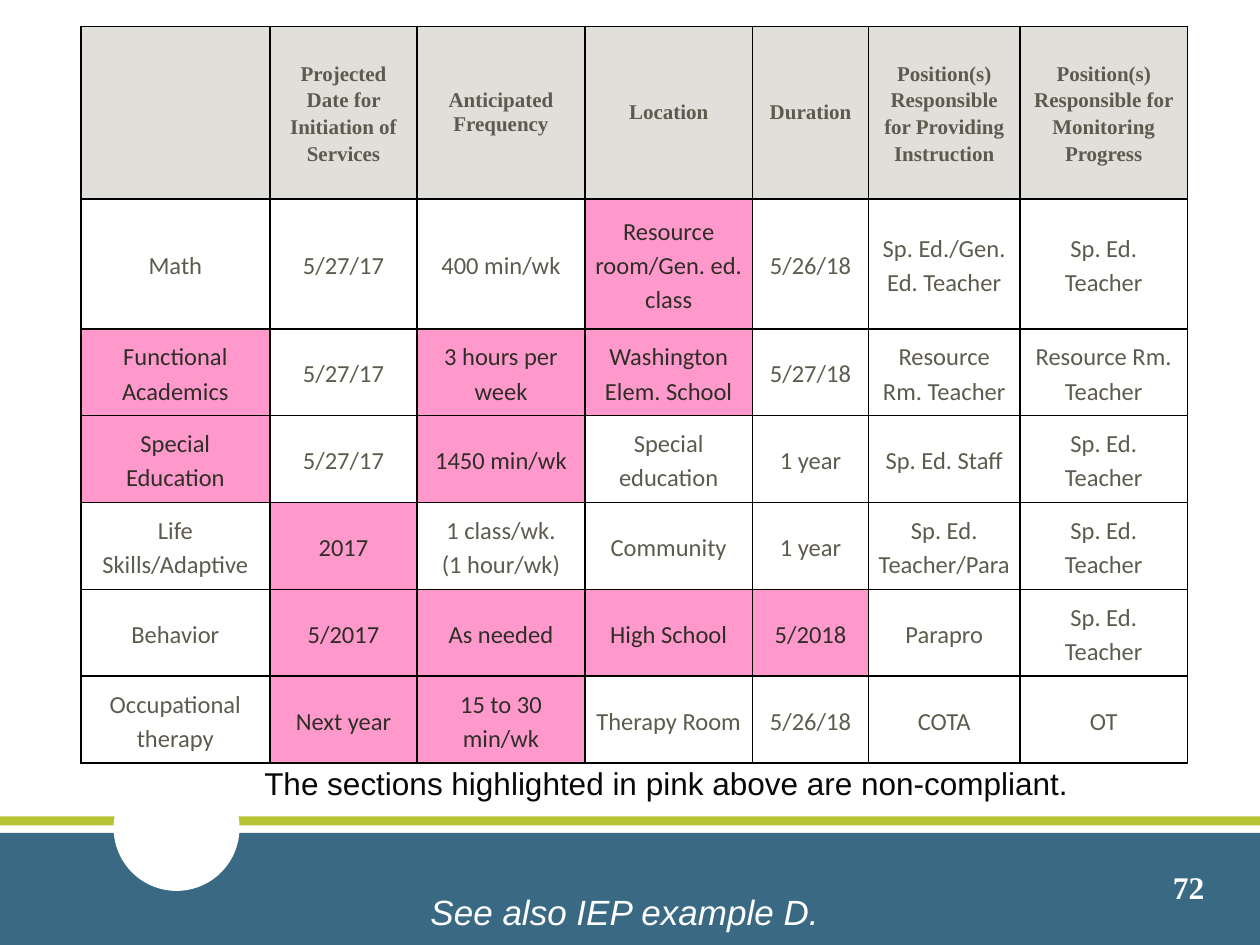
"""Build the slide with the table of planned services."""
import pptx
import pptx.dml.color
import pptx.enum.shapes
import pptx.enum.text
import pptx.oxml
import pptx.oxml.ns
import pptx.util

Cm, Pt = pptx.util.Cm, pptx.util.Pt
RGBColor = pptx.dml.color.RGBColor
ALIGN = pptx.enum.text.PP_ALIGN
ANCHOR = pptx.enum.text.MSO_ANCHOR
SHAPE = pptx.enum.shapes.MSO_SHAPE

WHITE = RGBColor(0xFF, 0xFF, 0xFF)
BLACK = RGBColor(0x00, 0x00, 0x00)
INK = RGBColor(0x07, 0x07, 0x05)
LIME = RGBColor(0xB7, 0xC3, 0x33)
BLUE = RGBColor(0x3A, 0x69, 0x83)
STONE = RGBColor(0xE0, 0xDF, 0xDA)
PINK = RGBColor(0xFF, 0x99, 0xCC)
GREY = RGBColor(0x5D, 0x5B, 0x4E)
DARK = RGBColor(0x2E, 0x2E, 0x27)

HEAD = ["", "Projected Date for Initiation of Services", "Anticipated Frequency",
        "Location", "Duration", "Position(s) Responsible for Providing Instruction",
        "Position(s) Responsible for Monitoring Progress"]
ROWS = [
    ["Math", "5/27/17", "400 min/wk", "Resource room/Gen. ed. class", "5/26/18",
     "Sp. Ed./Gen. Ed. Teacher", "Sp. Ed. Teacher"],
    ["Functional Academics", "5/27/17", "3 hours per week", "Washington Elem. School",
     "5/27/18", "Resource Rm. Teacher", "Resource Rm. Teacher"],
    ["Special Education", "5/27/17", "1450 min/wk", "Special education", "1 year",
     "Sp. Ed. Staff", "Sp. Ed. Teacher"],
    ["Life Skills/Adaptive", "2017", "1 class/wk.\n(1 hour/wk)", "Community", "1 year",
     "Sp. Ed. Teacher/Para", "Sp. Ed. Teacher"],
    ["Behavior", "5/2017", "As needed", "High School", "5/2018", "Parapro",
     "Sp. Ed. Teacher"],
    ["Occupational therapy", "Next year", "15 to 30 min/wk", "Therapy Room", "5/26/18",
     "COTA", "OT"],
]
FLAGS = [{3}, {0, 2, 3}, {0, 2}, {1}, {1, 2, 3, 4}, {1, 2}]
TIGHT = {2, 3, 4}
WIDTHS = [3.81, 2.97, 3.38, 3.38, 2.34, 3.05, 3.38]
HEIGHTS = [3.48, 2.62] + [1.75] * 5

SHAPES = [
    (SHAPE.RECTANGLE, (0, 16.46, 25.4, 0.18), LIME),
    (SHAPE.RECTANGLE, (0, 16.79, 25.4, 2.26), BLUE),
    (SHAPE.OVAL, (2.29, 15.42, 2.54, 2.54), WHITE),
]
NOTES = [
    ("See also IEP example D.", (0.15, 17.83, 24.89, 1.12), ALIGN.CENTER, ANCHOR.TOP,
     ("Arial", 20, WHITE, False, True)),
    ("The sections highlighted in pink above are non-compliant.",
     (3.89, 15.27, 19.08, 1.02), ALIGN.CENTER, ANCHOR.TOP,
     ("Arial", 18, INK, False, False)),
    ("72", (22.17, 17.12, 2.36, 1.27), ALIGN.RIGHT, ANCHOR.BOTTOM,
     ("Times New Roman", 18, WHITE, True, False)),
]


def style(para, align, face, size, color, bold, slant):
    para.alignment = align
    font = para.font
    font.name, font.size = face, Pt(size)
    font.bold, font.italic = bold, slant
    font.color.rgb = color


def edge(cell):
    props = cell._tc.get_or_add_tcPr()
    for side in ("lnL", "lnR", "lnT", "lnB"):
        props.append(pptx.oxml.parse_xml(
            f'<a:{side} {pptx.oxml.ns.nsdecls("a")} w="{Pt(1)}"><a:solidFill>'
            f'<a:srgbClr val="{BLACK}"/></a:solidFill></a:{side}>'))


def put(cell, text, fill, look, space):
    edge(cell)
    cell.fill.solid()
    cell.fill.fore_color.rgb = fill
    cell.vertical_anchor = ANCHOR.MIDDLE
    cell.margin_left = cell.margin_right = Cm(0.18)
    cell.margin_top = cell.margin_bottom = 0
    cell.text_frame.text = text
    for para in cell.text_frame.paragraphs:
        para.line_spacing = space
        style(para, ALIGN.CENTER, *look)


def add_grid(slide):
    frame = slide.shapes.add_table(len(HEIGHTS), len(WIDTHS), Cm(1.63), Cm(0.53),
                                   Cm(sum(WIDTHS)), Cm(sum(HEIGHTS)))
    table = frame.table
    table.first_row = table.horz_banding = False
    for col, width in zip(table.columns, WIDTHS):
        col.width = Cm(width)
    for row, height in zip(table.rows, HEIGHTS):
        row.height = Cm(height)
    for c, text in enumerate(HEAD):
        put(table.cell(0, c), text, STONE, ("Times New Roman", 12, GREY, True, False),
            1.0 if c in TIGHT else 1.15)
    for r, (row, flags) in enumerate(zip(ROWS, FLAGS), 1):
        for c, text in enumerate(row):
            fill, ink = (PINK, DARK) if c in flags else (WHITE, GREY)
            put(table.cell(r, c), text, fill, ("Calibri", 14, ink, False, False), 1.15)


def main():
    deck = pptx.Presentation()
    deck.slide_width, deck.slide_height = Cm(25.4), Cm(19.05)
    slide = deck.slides.add_slide(deck.slide_layouts[6])
    for kind, box, color in SHAPES:
        shape = slide.shapes.add_shape(kind, *map(Cm, box))
        shape.shadow.inherit = False
        shape.fill.solid()
        shape.fill.fore_color.rgb = color
        shape.line.fill.background()
    add_grid(slide)
    for text, box, align, anchor, look in NOTES:
        frame = slide.shapes.add_textbox(*map(Cm, box)).text_frame
        frame.word_wrap = True
        frame.vertical_anchor = anchor
        frame.text = text
        style(frame.paragraphs[0], align, *look)
    deck.save("out.pptx")


if __name__ == "__main__":
    main()
